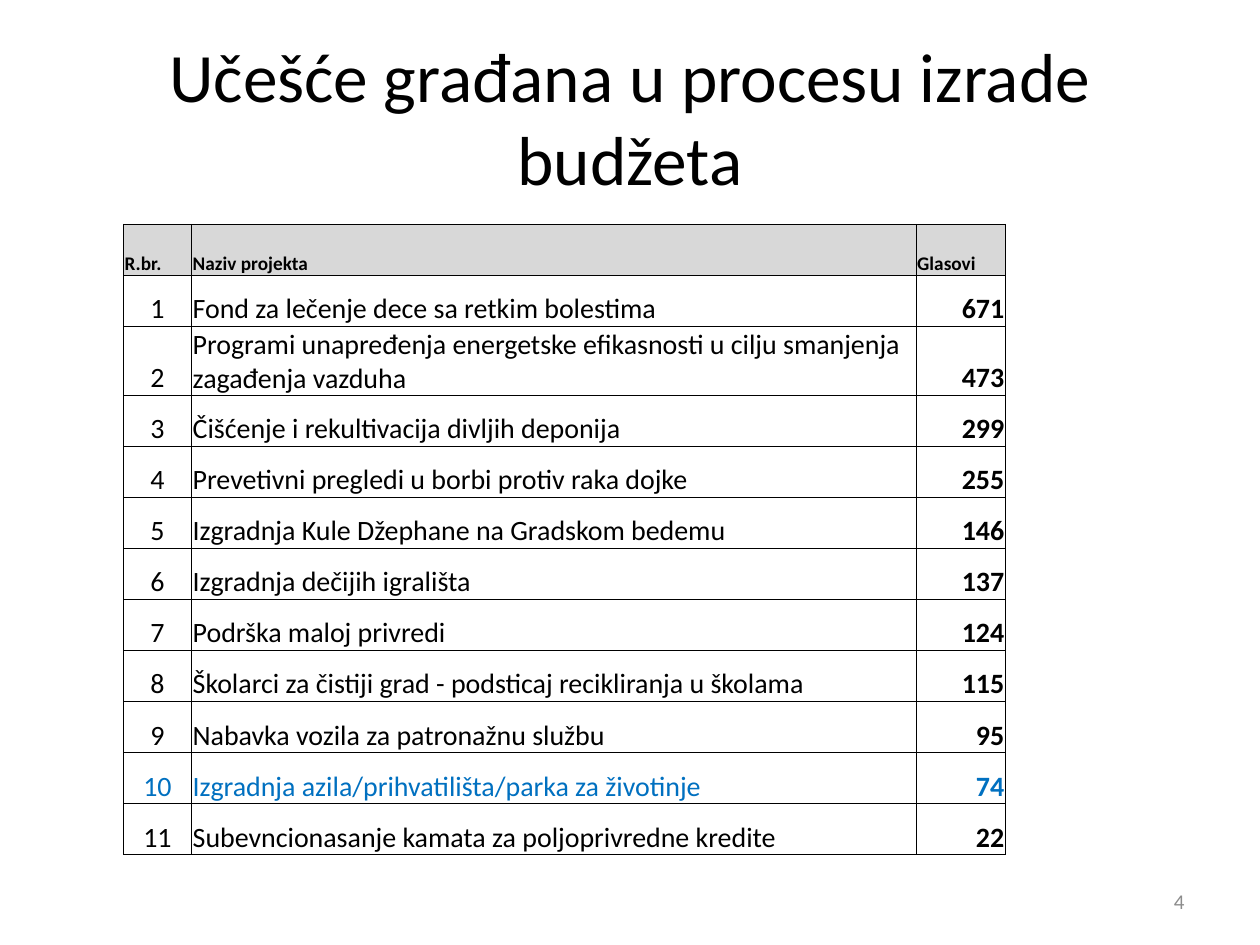
from lxml import etree
from pptx import Presentation
from pptx.dml.color import RGBColor
from pptx.enum.text import MSO_ANCHOR as ANCHOR, PP_ALIGN as ALIGN
from pptx.oxml.ns import qn
from pptx.util import Inches, Pt

COLORS = {"text": "000000", "accent": "0070C0", "muted": "8C8C8C",
          "header": "D8D8D8", "border": "000000"}

HEADERS = ["R.br.", "Naziv projekta", "Glasovi"]
PROJECTS = [
    ("Fond za lečenje dece sa retkim bolestima", 671),
    ("Programi unapređenja energetske efikasnosti u cilju smanjenja zagađenja vazduha", 473),
    ("Čišćenje i rekultivacija divljih deponija", 299),
    ("Prevetivni pregledi u borbi protiv raka dojke", 255),
    ("Izgradnja Kule Džephane na Gradskom bedemu", 146),
    ("Izgradnja dečijih igrališta", 137),
    ("Podrška maloj privredi", 124),
    ("Školarci za čistiji grad - podsticaj recikliranja u školama", 115),
    ("Nabavka vozila za patronažnu službu", 95),
    ("Izgradnja azila/prihvatilišta/parka za životinje", 74),
    ("Subevncionasanje kamata za poljoprivredne kredite", 22),
]
HIGHLIGHTED = 10


def write(frame, text, size=16, color="text", bold=False, align=ALIGN.LEFT):
    frame.word_wrap = True
    paragraph = frame.paragraphs[0]
    paragraph.alignment = align
    run = paragraph.add_run()
    run.text = text
    run.font.name = "Calibri"
    run.font.size = Pt(size)
    run.font.bold = bold
    run.font.color.rgb = RGBColor.from_string(COLORS[color])


def style_cell(cell, fill=None):
    cell.vertical_anchor = ANCHOR.BOTTOM
    cell.margin_left = cell.margin_right = cell.margin_top = Inches(0.01)
    cell.margin_bottom = 0
    # Borders come before the fill in the cell properties
    properties = cell._tc.get_or_add_tcPr()
    for side in ("a:lnL", "a:lnR", "a:lnT", "a:lnB"):
        line = etree.SubElement(properties, qn(side), w=str(Pt(0.5)))
        solid = etree.SubElement(line, qn("a:solidFill"))
        etree.SubElement(solid, qn("a:srgbClr"), val=COLORS["border"])
    if fill:
        cell.fill.solid()
        cell.fill.fore_color.rgb = RGBColor.from_string(COLORS[fill])
    else:
        cell.fill.background()


presentation = Presentation()
presentation.slide_width = Inches(10)
presentation.slide_height = Inches(7.5)
slide = presentation.slides.add_slide(presentation.slide_layouts[6])

# Title
title = slide.shapes.add_textbox(Inches(0.5), Inches(0.3), Inches(9), Inches(1.25)).text_frame
title.vertical_anchor = ANCHOR.MIDDLE
write(title, "Učešće građana u procesu izrade budžeta", size=39.6, align=ALIGN.CENTER)

# Slide number
page = slide.shapes.add_textbox(Inches(7.17), Inches(6.95), Inches(2.33), Inches(0.4)).text_frame
page.vertical_anchor = ANCHOR.MIDDLE
write(page, "4", size=12, color="muted", align=ALIGN.RIGHT)

# Table of votes
votes_table = slide.shapes.add_table(len(PROJECTS) + 1, len(HEADERS), Inches(0.98),
                                     Inches(1.78), Inches(7), Inches(4.87)).table
votes_table.horz_banding = False
for column, width in zip(votes_table.columns, (0.54, 5.75, 0.71)):
    column.width = Inches(width)

# Header row
for col, header in enumerate(HEADERS):
    cell = votes_table.cell(0, col)
    style_cell(cell, fill="header")
    write(cell.text_frame, header, size=11, bold=True)

# Project rows
ALIGNMENTS = (ALIGN.CENTER, ALIGN.LEFT, ALIGN.RIGHT)
for rank, (project, votes) in enumerate(PROJECTS, start=1):
    color = "accent" if rank == HIGHLIGHTED else "text"
    for col, value in enumerate((rank, project, votes)):
        cell = votes_table.cell(rank, col)
        style_cell(cell)
        write(cell.text_frame, str(value), color=color, bold=col == 2, align=ALIGNMENTS[col])

presentation.save("out.pptx")
